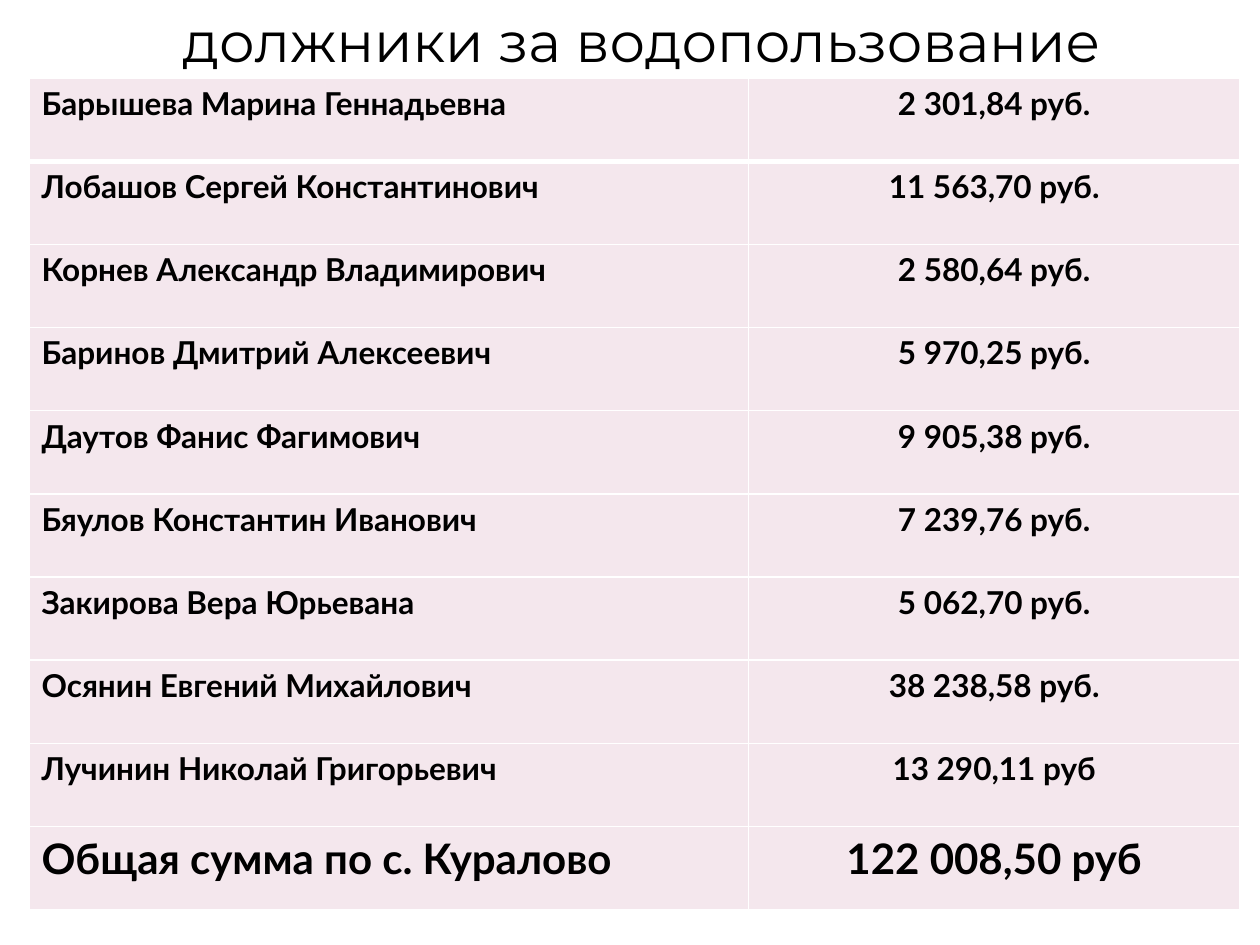
from lxml.etree import SubElement
from pptx import Presentation
from pptx.dml.color import RGBColor
from pptx.enum.text import MSO_ANCHOR as Anchor, MSO_AUTO_SIZE as AutoSize, PP_ALIGN as Align
from pptx.oxml.ns import qn
from pptx.util import Inches, Pt

COLORS = {"text": "000000", "cell": "F4E7ED", "border": "FFFFFF"}

DEBTS = [
    ("Барышева Марина Геннадьевна", "2 301,84 руб."),
    ("Лобашов Сергей Константинович", "11 563,70 руб."),
    ("Корнев Александр Владимирович", "2 580,64 руб."),
    ("Баринов Дмитрий Алексеевич", "5 970,25 руб."),
    ("Даутов Фанис Фагимович", "9 905,38 руб."),
    ("Бяулов Константин Иванович", "7 239,76 руб."),
    ("Закирова Вера Юрьевана", "5 062,70 руб."),
    ("Осянин Евгений Михайлович", "38 238,58 руб."),
    ("Лучинин Николай Григорьевич", "13 290,11 руб"),
    ("Общая сумма по с. Куралово", "122 008,50 руб"),
]
COLUMN_WIDTHS = (5.71, 3.9)
ROW_HEIGHT = 0.66


def format_text(paragraph, font_name, size, align, bold=False):
    paragraph.alignment = align
    for run in paragraph.runs:
        run.font.name = font_name
        run.font.size = Pt(size)
        run.font.bold = bold
        run.font.color.rgb = RGBColor.from_string(COLORS["text"])


def set_borders(cell, top, bottom):
    properties = cell._tc.get_or_add_tcPr()
    for side, width in (("L", 1), ("R", 1), ("T", top), ("B", bottom)):
        line = SubElement(properties, qn(f"a:ln{side}"), w=str(Pt(width)))
        fill = SubElement(line, qn("a:solidFill"))
        SubElement(fill, qn("a:srgbClr"), val=COLORS["border"])


def add_title(slide, text):
    title = slide.shapes.title
    title.left, title.top = Inches(0.33), Inches(0)
    title.width, title.height = Inches(9.53), Inches(0.64)
    frame = title.text_frame
    frame.text = text
    frame.word_wrap = True
    frame.auto_size = AutoSize.NONE
    frame.vertical_anchor = Anchor.TOP
    format_text(frame.paragraphs[0], "Montserrat", 32, Align.CENTER)


def add_debt_table(slide):
    table = slide.shapes.add_table(
        len(DEBTS), len(COLUMN_WIDTHS), Inches(0.23), Inches(0.62),
        Inches(sum(COLUMN_WIDTHS)), Inches(ROW_HEIGHT * len(DEBTS)),
    ).table
    for column, width in zip(table.columns, COLUMN_WIDTHS):
        column.width = Inches(width)

    last = len(DEBTS) - 1
    for row, debt in enumerate(DEBTS):
        table.rows[row].height = Inches(ROW_HEIGHT)
        size = 24 if row == last else 18
        for column, (text, align) in enumerate(zip(debt, (Align.LEFT, Align.CENTER))):
            cell = table.cell(row, column)
            cell.text_frame.text = text
            format_text(cell.text_frame.paragraphs[0], "Lato", size, align, bold=True)
            # A thicker rule separates the first row from the rest
            set_borders(cell, top=3 if row == 1 else 1, bottom=3 if row == 0 else 1)
            cell.fill.solid()
            cell.fill.fore_color.rgb = RGBColor.from_string(COLORS["cell"])


def main():
    deck = Presentation()
    deck.slide_width, deck.slide_height = Inches(10), Inches(7.5)
    slide = deck.slides.add_slide(deck.slide_layouts[5])  # Title Only

    # Heading
    add_title(slide, "должники за водопользование")
    # Debtors and the total
    add_debt_table(slide)

    deck.save("out.pptx")


if __name__ == "__main__":
    main()
